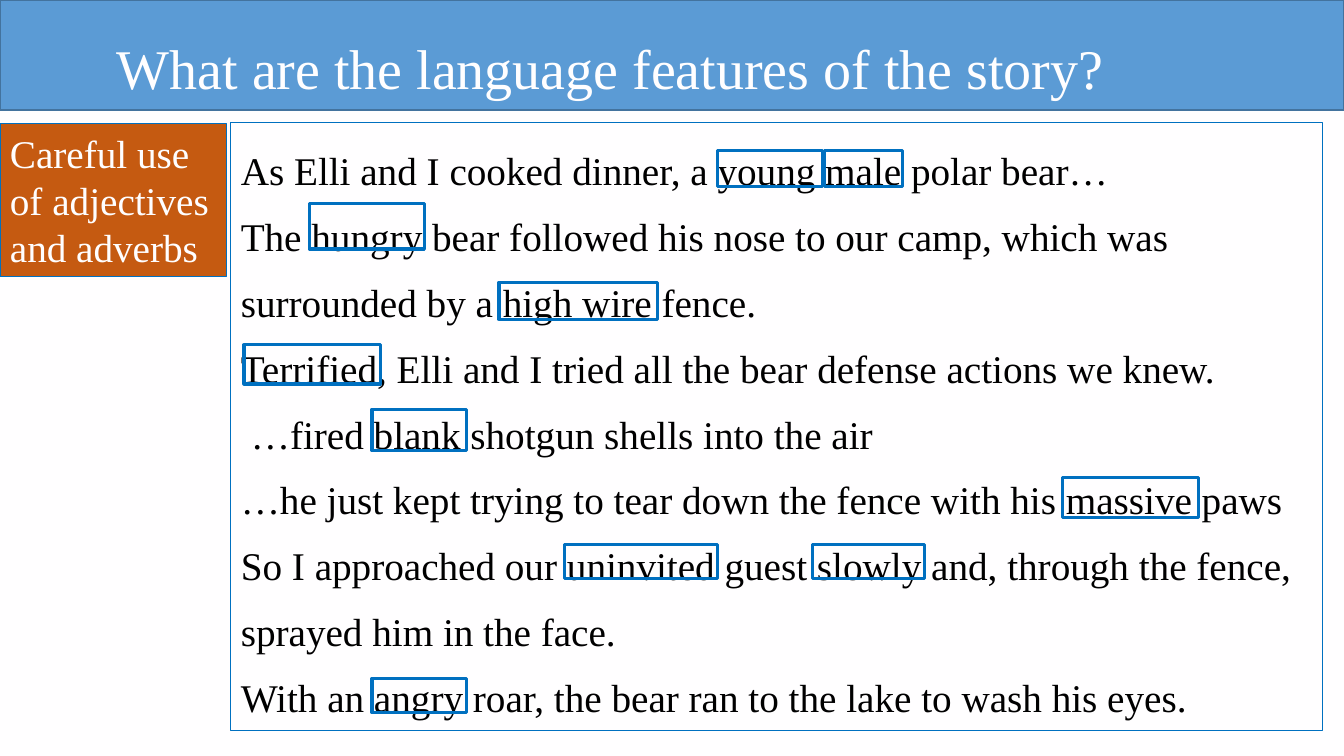
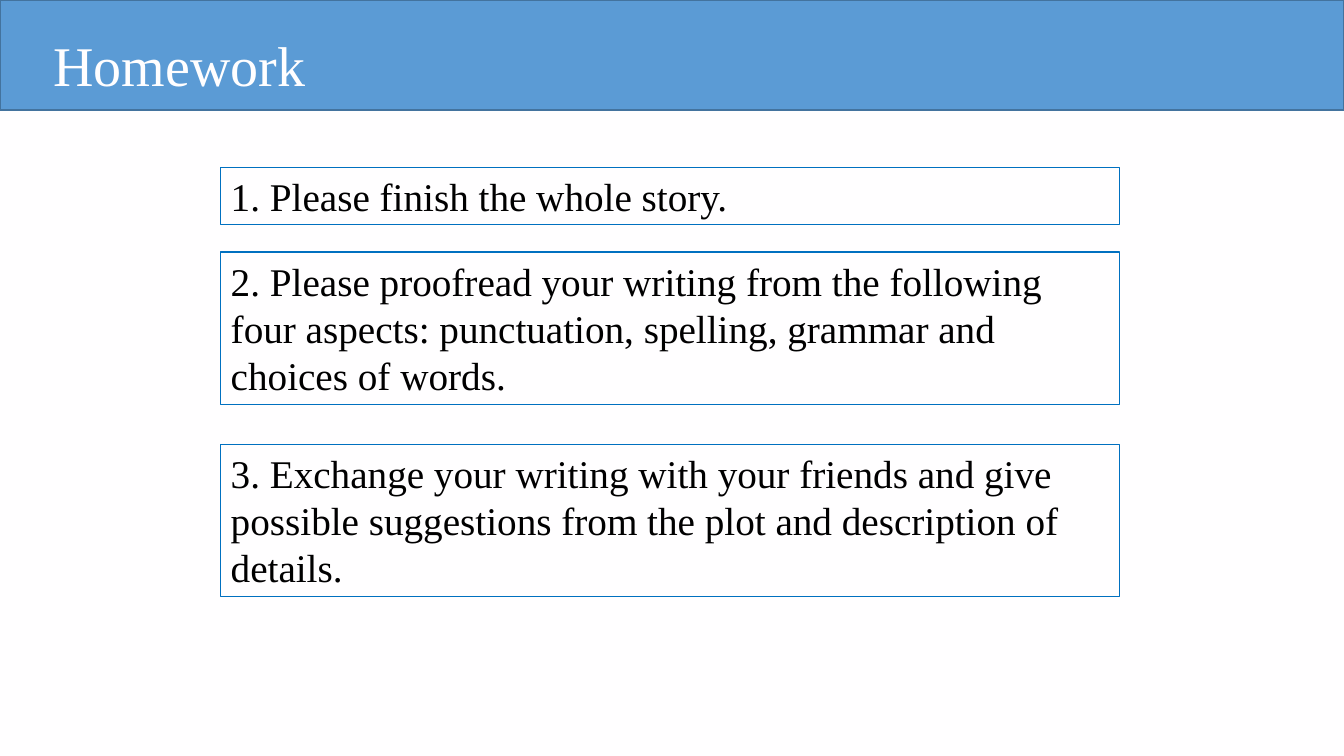
from pptx import Presentation
from pptx import util as u
from pptx.dml.color import RGBColor
from pptx.enum import shapes, text

WHITE, BLACK = "FFFEFF", "000000"
BAND, BAND_EDGE = "5B9BD5", "43739E"
BLUE, ORANGE = "0070C0", "C55A11"
FONT = "Times New Roman"
TITLE_SIZE, BODY_SIZE = 40, 28
WIDTH, HEIGHT, BAND_HEIGHT = 13.33, 7.5, 1.09
TITLE_ONLY = 5


def color(value):
    return RGBColor.from_string(value)


class Lesson:
    """Holds the shared style and the slide being built."""

    def __init__(self):
        self.deck = Presentation()
        self.deck.slide_width = u.Inches(WIDTH)
        self.deck.slide_height = u.Inches(HEIGHT)
        background = self.deck.slide_master.background.fill
        background.solid()
        background.fore_color.rgb = color(WHITE)
        self.slide = None

    def add_slide(self, title, left, top):
        layout = self.deck.slide_layouts[TITLE_ONLY]
        self.slide = self.deck.slides.add_slide(layout)
        band = self.box(0, 0, WIDTH, BAND_HEIGHT, BAND_EDGE, 1, BAND)
        heading = self.slide.shapes.title
        band._element.addnext(heading._element)  # title in front of the band
        heading.left, heading.top = u.Inches(left), u.Inches(top)
        heading.width, heading.height = u.Inches(WIDTH - left), u.Inches(0.77)
        self.set_text(heading, [title], TITLE_SIZE, WHITE)

    def box(self, left, top, width, height, line=BLUE, weight=0.75, fill=None):
        shape = self.slide.shapes.add_shape(
            shapes.MSO_SHAPE.RECTANGLE, u.Inches(left), u.Inches(top),
            u.Inches(width), u.Inches(height))
        shape.shadow.inherit = False
        shape.line.color.rgb = color(line)
        shape.line.width = u.Pt(weight)
        if fill:
            shape.fill.solid()
            shape.fill.fore_color.rgb = color(fill)
        else:
            shape.fill.background()
        return shape

    def set_text(self, shape, lines, size=BODY_SIZE, ink=BLACK, spacing=None):
        frame = shape.text_frame
        frame.text = "\n".join(lines)
        frame.word_wrap = True
        frame.auto_size = text.MSO_AUTO_SIZE.NONE
        frame.vertical_anchor = text.MSO_ANCHOR.TOP
        for para in frame.paragraphs:
            para.alignment = text.PP_ALIGN.LEFT
            if spacing:
                para.line_spacing = u.Pt(spacing)
            for span in para.runs:
                span.font.name = FONT
                span.font.size = u.Pt(size)
                span.font.color.rgb = color(ink)
        return frame

    def highlight(self, left, top, width, height):
        self.box(left, top, width, height, weight=2.25)


def language_features(lesson):
    lesson.add_slide("What are the language features of the story?", 1.06, 0.28)
    story = lesson.set_text(lesson.box(2.29, 1.22, 10.83, 6.03), [
        "As Elli and I cooked dinner, a young male polar bear…",
        "The hungry bear followed his nose to our camp, which was "
        "surrounded by a high wire fence.",
        "Terrified, Elli and I tried all the bear defense actions we knew.",
        "…fired blank shotgun shells into the air",
        "…he just kept trying to tear down the fence with his massive paws",
        "So I approached our uninvited guest slowly and, through the fence, "
        "sprayed him in the face.",
        "With an angry roar, the bear ran to the lake to wash his eyes.",
    ], spacing=47)
    fired = story.paragraphs[3]
    fired._p.get_or_add_pPr().set("indent", str(u.Inches(0.1)))

    label = lesson.box(0, 1.23, 2.25, 1.51, fill=ORANGE)
    lesson.set_text(label, ["Careful use of adjectives and adverbs"], ink=WHITE)

    word_frames = {
        "young": (7.12, 1.49, 1.04, 0.36),
        "male": (8.18, 1.49, 0.77, 0.36),
        "hungry": (3.07, 2.02, 1.14, 0.45),
        "high wire": (4.95, 2.8, 1.57, 0.37),
        "Terrified": (2.42, 3.42, 1.35, 0.39),
        "blank": (3.69, 4.06, 0.94, 0.41),
        "massive": (10.54, 4.74, 1.35, 0.39),
        "uninvited": (5.6, 5.4, 1.52, 0.34),
        "slowly": (8.06, 5.4, 1.11, 0.34),
        "angry": (3.69, 6.73, 0.94, 0.34),
    }
    for place in word_frames.values():
        lesson.highlight(*place)


def homework(lesson):
    lesson.add_slide("Homework", 0.43, 0.25)
    tasks = [
        (1.66, 0.57, "1. Please finish the whole story."),
        (2.5, 1.51, "2. Please proofread your writing from the following four "
                    "aspects: punctuation, spelling, grammar and choices of words."),
        (4.41, 1.51, "3. Exchange your writing with your friends and give possible "
                     "suggestions from the plot and description of details."),
    ]
    for top, height, task in tasks:
        lesson.set_text(lesson.box(2.19, top, 8.91, height), [task])


def main():
    lesson = Lesson()
    language_features(lesson)
    homework(lesson)
    lesson.deck.save("out.pptx")


if __name__ == "__main__":
    main()
